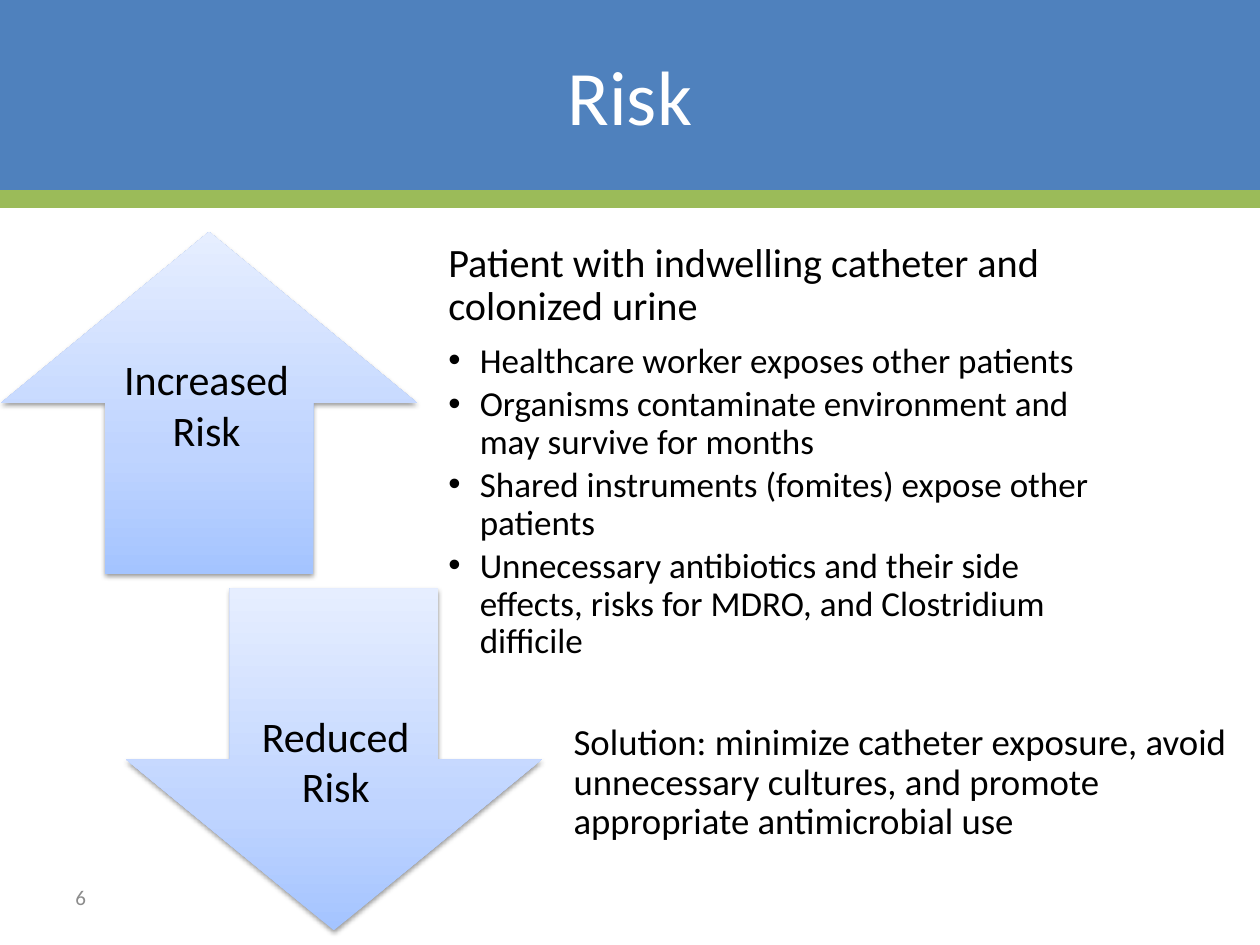
from copy import deepcopy

from lxml import etree
from pptx import Presentation
from pptx.dml.color import RGBColor
from pptx.enum import shapes, text
from pptx.oxml.ns import qn
from pptx.util import Pt

# Content
TITLE = "Risk"
PAGE_NUMBER = "6"
HEADING = "Patient with indwelling catheter and colonized urine"
DANGERS = [
    "Healthcare worker exposes other patients",
    "Organisms contaminate environment and may survive for months",
    "Shared instruments (fomites) expose other patients",
    "Unnecessary antibiotics and their side effects, risks for MDRO, "
    "and Clostridium difficile",
]
SOLUTION = ("Solution: minimize catheter exposure, avoid unnecessary cultures, "
            "and promote appropriate antimicrobial use")
# Arrow shape, arrow left and top, label, label box
ARROWS = [
    (shapes.MSO_SHAPE.UP_ARROW, 0.7, 132.5, "Increased Risk", (62.6, 198.7, 111, 65.4)),
    (shapes.MSO_SHAPE.DOWN_ARROW, 72, 336.2, "Reduced Risk", (137.5, 402.5, 108.7, 65.4)),
]

THEME = {
    "font": "Calibri",
    "band": "4F81BD", "rule": "9BBB59", "title": "FFFFFF",
    "body": "000000", "number": "8C8C8C",
    "gradient": [(0, "A4C4FF"), (0.35, "BFD4FF"), (1, "E6EEFF")],
    "size": {"title": 44, "label": 24, "heading": 23, "solution": 21,
             "bullet": 20, "number": 12},
}
SLIDE_W, SLIDE_H = 720, 540
BAND_H = 113.8
ARROW_W, ARROW_H = 237.6, 195.4
BODY_W = 403.2
BODY_INSETS = (11.4, 0, 11.4, 11.4)
BOX_INSETS = (7.2, 3.6, 7.2, 3.6)
BULLET_INDENT = 18

prs = Presentation()
prs.slide_width, prs.slide_height = Pt(SLIDE_W), Pt(SLIDE_H)
slide = prs.slides.add_slide(prs.slide_layouts[6])


def color(name):
    return RGBColor.from_string(THEME.get(name, name))


def add_box(box, insets=BOX_INSETS, anchor=text.MSO_ANCHOR.MIDDLE):
    frame = slide.shapes.add_textbox(*map(Pt, box)).text_frame
    frame.word_wrap = True
    frame.vertical_anchor = anchor
    (frame.margin_left, frame.margin_top,
     frame.margin_right, frame.margin_bottom) = map(Pt, insets)
    return frame


def write(paragraph, words, size, ink="body", align=text.PP_ALIGN.LEFT):
    paragraph.alignment = align
    run = paragraph.add_run()
    run.text = words
    run.font.name = THEME["font"]
    run.font.size = Pt(THEME["size"][size])
    run.font.color.rgb = color(ink)


def space(paragraph, after):
    paragraph.line_spacing = 0.9
    paragraph.space_after = Pt(after)


def make_bullet(paragraph):
    props = paragraph._p.get_or_add_pPr()
    props.set("marL", str(Pt(BULLET_INDENT)))
    props.set("indent", str(-Pt(BULLET_INDENT)))
    etree.SubElement(props, qn("a:buFont")).set("typeface", "Arial")
    etree.SubElement(props, qn("a:buChar")).set("char", "•")


def add_arrow(kind, left, top):
    arrow = slide.shapes.add_shape(kind, Pt(left), Pt(top), Pt(ARROW_W), Pt(ARROW_H))
    arrow.line.fill.background()
    # Three-stop gradient, dark at the bottom
    arrow.fill.gradient()
    arrow.fill.gradient_angle = 90
    stop_list = arrow._element.spPr.find(".//" + qn("a:gsLst"))
    stop_list.append(deepcopy(stop_list[-1]))
    for stop, (position, tint) in zip(arrow.fill.gradient_stops, THEME["gradient"]):
        stop.position = position
        stop.color.rgb = color(tint)
    # Soft shadow straight below
    arrow.shadow.inherit = False
    effects = arrow._element.spPr.find(qn("a:effectLst"))
    shadow = etree.SubElement(effects, qn("a:outerShdw"), blurRad=str(Pt(3.1)),
                              dist=str(Pt(1.6)), dir="5400000", rotWithShape="0")
    black = etree.SubElement(shadow, qn("a:srgbClr"), val="000000")
    etree.SubElement(black, qn("a:alpha"), val="38000")


# Title band and rule
band = slide.shapes.add_shape(shapes.MSO_SHAPE.RECTANGLE, 0, 0, Pt(SLIDE_W), Pt(BAND_H))
band.shadow.inherit = False
band.fill.solid()
band.fill.fore_color.rgb = color("band")
band.line.fill.background()

rule = slide.shapes.add_connector(shapes.MSO_CONNECTOR.STRAIGHT,
                                  0, Pt(BAND_H), Pt(SLIDE_W), Pt(BAND_H))
rule.line.color.rgb = color("rule")
rule.line.width = Pt(10)
etree.SubElement(rule._element.spPr, qn("a:effectLst"))

title = add_box((0, 0, SLIDE_W, 108))
write(title.paragraphs[0], TITLE, "title", "title", text.PP_ALIGN.CENTER)

# Arrows with their labels
for kind, left, top, label, label_box in ARROWS:
    add_arrow(kind, left, top)
    label_frame = add_box(label_box, anchor=text.MSO_ANCHOR.TOP)
    write(label_frame.paragraphs[0], label, "label", align=text.PP_ALIGN.CENTER)

# Dangers beside the upper arrow
dangers = add_box((244.8, 144, BODY_W, 239.8), BODY_INSETS)
write(dangers.paragraphs[0], HEADING, "heading")
space(dangers.paragraphs[0], 8)
for danger in DANGERS:
    item = dangers.add_paragraph()
    write(item, danger, "bullet")
    space(item, 3)
    make_bullet(item)

# Solution beside the lower arrow
solution = add_box((316.4, 411.8, BODY_W, 82.8), BODY_INSETS)
write(solution.paragraphs[0], SOLUTION, "solution")
space(solution.paragraphs[0], 8)

# Page number
number = add_box((36, 498.2, 168, 28.8))
write(number.paragraphs[0], PAGE_NUMBER, "number", "number")

prs.save("out.pptx")
